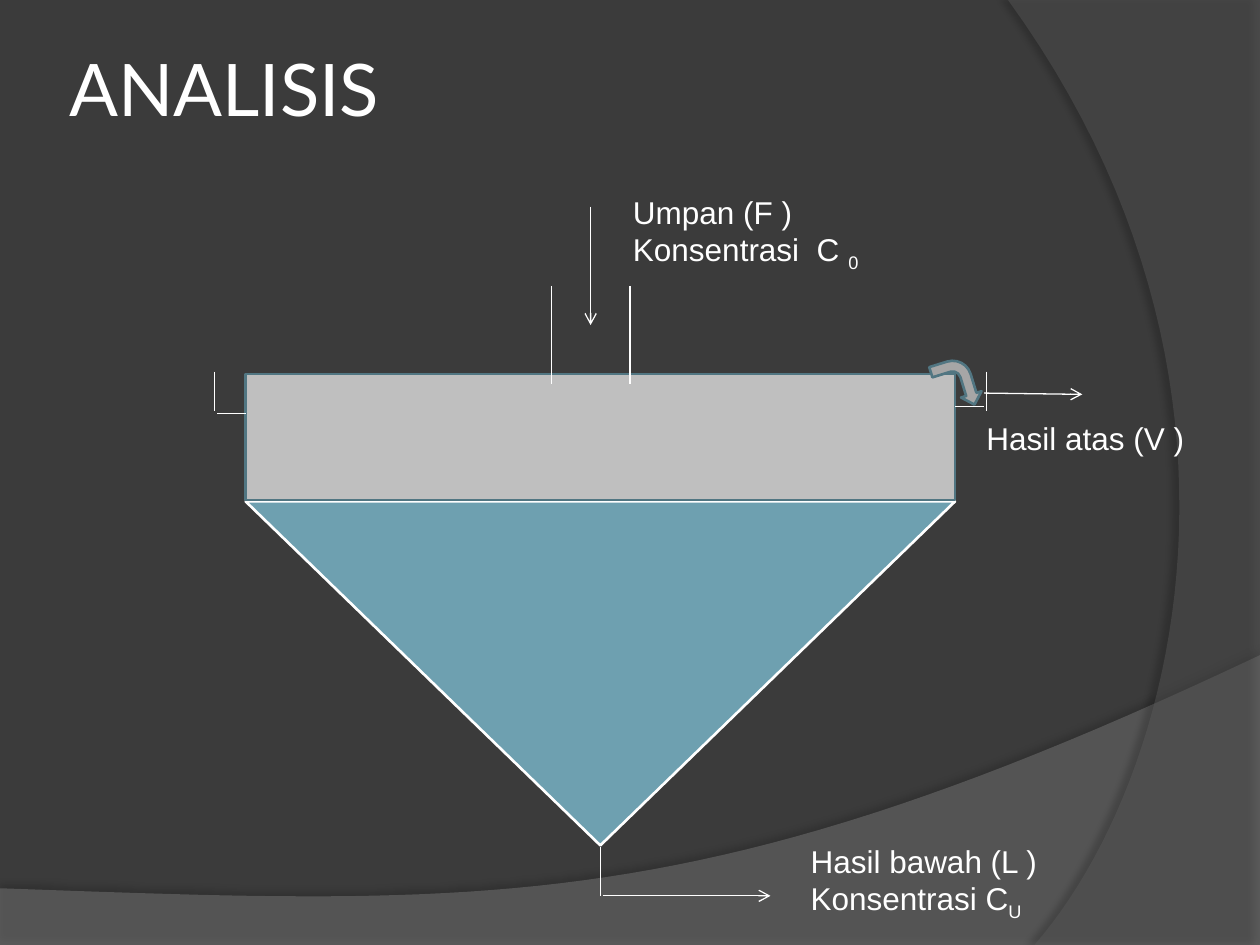
from dataclasses import dataclass

from lxml.etree import SubElement
from pptx import Presentation
from pptx.dml.color import RGBColor
from pptx.enum.shapes import MSO_CONNECTOR, MSO_SHAPE
from pptx.enum.text import MSO_ANCHOR, MSO_AUTO_SIZE, PP_ALIGN
from pptx.oxml.ns import qn
from pptx.util import Inches, Pt

BACKGROUND = RGBColor(0x3B, 0x3B, 0x3B)
WAVE = RGBColor(0x7F, 0x7F, 0x7F)
ARC = RGBColor(0x5E, 0x5E, 0x5E)
WHITE = RGBColor(0xFF, 0xFF, 0xFF)
SLUDGE = RGBColor(0x6E, 0xA0, 0xB0)
CLEAR = RGBColor(0xBF, 0xBF, 0xBF)
SPILL = RGBColor(0xA6, 0xA6, 0xA6)
EDGE = RGBColor(0x51, 0x76, 0x82)

COLS, ROWS = 100, 75
CELL = Inches(0.1)


@dataclass
class Box:
    """An area of the slide, in grid columns and rows."""
    x: float
    y: float
    w: float
    h: float

    def emu(self):
        return [round(v * CELL) for v in (self.x, self.y, self.w, self.h)]

    def inner(self, dx, dy, w, h):
        return Box(self.x + dx, self.y + dy, w, h)


def add_text(tf, lines, font="Arial", size=18, color=WHITE, anchor=MSO_ANCHOR.TOP):
    """Write lines of (text, subscript) pairs into a text frame."""
    tf.word_wrap = True
    tf.vertical_anchor = anchor
    for i, line in enumerate(lines):
        p = tf.add_paragraph() if i else tf.paragraphs[0]
        p.alignment = PP_ALIGN.LEFT
        for text, subscript in line:
            r = p.add_run()
            r.text = text
            r.font.name, r.font.size = font, Pt(size)
            r.font.color.rgb = color
            if subscript:
                r._r.get_or_add_rPr().set("baseline", "-25000")


def add_label(s, box, lines):
    tf = s.shapes.add_textbox(*box.emu()).text_frame
    add_text(tf, lines)
    tf.auto_size = MSO_AUTO_SIZE.SHAPE_TO_FIT_TEXT


def add_solid(s, kind, box, fill, line, rotation=0):
    sp = s.shapes.add_shape(kind, *box.emu())
    sp.shadow.inherit = False
    sp.fill.solid()
    sp.fill.fore_color.rgb = fill
    sp.line.color.rgb, sp.line.width = line, Pt(1.5)
    sp.rotation = rotation


def add_line(s, box, x1, y1, x2, y2, arrow=False):
    """Draw a line between two points measured from the box's corner."""
    ends = (box.x + x1, box.y + y1, box.x + x2, box.y + y2)
    line = s.shapes.add_connector(MSO_CONNECTOR.STRAIGHT,
                                  *[round(v * CELL) for v in ends])
    line.line.color.rgb, line.line.width = WHITE, Pt(0.75)
    spPr = line.element.spPr
    if arrow:
        SubElement(spPr.find(qn("a:ln")), qn("a:tailEnd"), type="arrow")
    SubElement(spPr, qn("a:effectLst"))


def bezier(a, b, c, d, steps=48):
    """Points along a cubic curve, after its start."""
    for i in range(1, steps + 1):
        t = i / steps
        u = 1 - t
        yield tuple(u**3 * p + 3 * u * u * t * q + 3 * u * t * t * r + t**3 * v
                    for p, q, r, v in zip(a, b, c, d))


def add_sheet(s, points, color, alpha, shadow_alpha, blur, distance, angle):
    """Draw a translucent sheet with a soft shadow, behind the title."""
    start, *rest = [(round(x * CELL), round(y * CELL)) for x, y in points]
    builder = s.shapes.build_freeform(*start)
    builder.add_line_segments(rest, close=True)
    sp = builder.convert_to_shape()
    sp.fill.solid()
    sp.fill.fore_color.rgb = color
    sp.line.fill.background()
    spPr = sp.element.spPr
    clr = spPr.find(qn("a:solidFill"))[0]
    SubElement(clr, qn("a:alpha"), val=str(alpha * 1000))
    effects = SubElement(spPr, qn("a:effectLst"))
    shadow = SubElement(effects, qn("a:outerShdw"), blurRad=str(Pt(blur)),
                        dist=str(Pt(distance)), dir=str(angle * 60000),
                        algn="ctr", rotWithShape="0")
    black = SubElement(shadow, qn("a:srgbClr"), val="000000")
    SubElement(black, qn("a:alpha"), val=str(shadow_alpha * 1000))
    s.shapes.title.element.addprevious(sp.element)


def backdrop(s, box):
    s.background.fill.solid()
    s.background.fill.fore_color.rgb = BACKGROUND
    right, bottom = box.x + box.w, box.y + box.h
    # Wave along the bottom
    crest = bezier((right, 52), (55.9, 72.9), (39.1, 71.9), (box.x, 70.5))
    add_sheet(s, [(box.x, bottom), (right, bottom), (right, 52), *crest],
              WAVE, 45, 35, 4, 3.5, 270)
    # Arc down the right side
    arc = bezier((82.1, bottom), (93.5, 61.9), (101.8, 30), (80, box.y))
    add_sheet(s, [(right, box.y), (right, bottom), (82.1, bottom), *arc],
              ARC, 40, 45, 4, 4, 180)


def title(s, box, text):
    sp = s.shapes.title
    sp.left, sp.top, sp.width, sp.height = box.emu()
    tf = sp.text_frame
    tf.margin_left = tf.margin_right = tf.margin_top = tf.margin_bottom = Inches(0.05)
    add_text(tf, [[(text, False)]], font="Lato", size=41.4, anchor=MSO_ANCHOR.MIDDLE)


def tank(s, box):
    clear_h = 10
    add_solid(s, MSO_SHAPE.FLOWCHART_MERGE,
              box.inner(0, clear_h + 0.1, box.w, box.h - clear_h - 0.1), SLUDGE, WHITE)
    add_solid(s, MSO_SHAPE.RECTANGLE, box.inner(0, 0, box.w, clear_h), CLEAR, EDGE)
    # Overflow channel on each side: wall and floor
    for edge, out, floor in ((0, -1, 3.1), (box.w, 1, 2.55)):
        wall = edge + out * 2.5
        add_line(s, box, wall, -0.2, wall, 2.9)
        add_line(s, box, edge, floor, edge + out * 2.3, floor)


def feed(s, box):
    # Inlet pipe with the flow arrow between its walls
    for x in (0, box.w):
        add_line(s, box, x, 6.3, x, box.h)
    add_line(s, box, box.w / 2, 0, box.w / 2, 9.4, arrow=True)
    add_label(s, box.inner(5.5, -1.6, 21.1, 7.1),
              [[("Umpan (F )", False)], [("Konsentrasi  C ", False), ("0", True)]])


def overflow(s, box):
    add_line(s, box, 4.1, 2.4, box.w, 2.5, arrow=True)
    add_label(s, box.inner(3.3, 4, 19.5, 4),
              [[("Hasil atas (V )", False)]])
    add_solid(s, MSO_SHAPE.BENT_ARROW, box.inner(0, 0, 3.9, 3.4), SPILL, EDGE, 72.8)


def underflow(s, box):
    add_line(s, box, 0, 0, 0, box.h)
    add_line(s, box, 0.2, box.h, box.w, box.h, arrow=True)
    add_label(s, box.inner(box.w + 2.2, -0.9, 25, 7.1),
              [[("Hasil bawah (L )", False)], [("Konsentrasi C", False), ("U", True)]])


def main():
    prs = Presentation()
    prs.slide_width, prs.slide_height = COLS * CELL, ROWS * CELL
    s = prs.slides.add_slide(prs.slide_layouts[5])
    backdrop(s, Box(0, 0, COLS, ROWS))
    title(s, Box(5, 3, 90, 7.9), "ANALISIS")
    tank(s, Box(19.5, 29.7, 56.3, 37.4))
    feed(s, Box(43.75, 16.4, 6.25, 14.1))
    overflow(s, Box(74, 28.8, 11.9, 8))
    underflow(s, Box(47.65, 67.2, 13.5, 3.9))
    prs.save("out.pptx")


if __name__ == "__main__":
    main()
